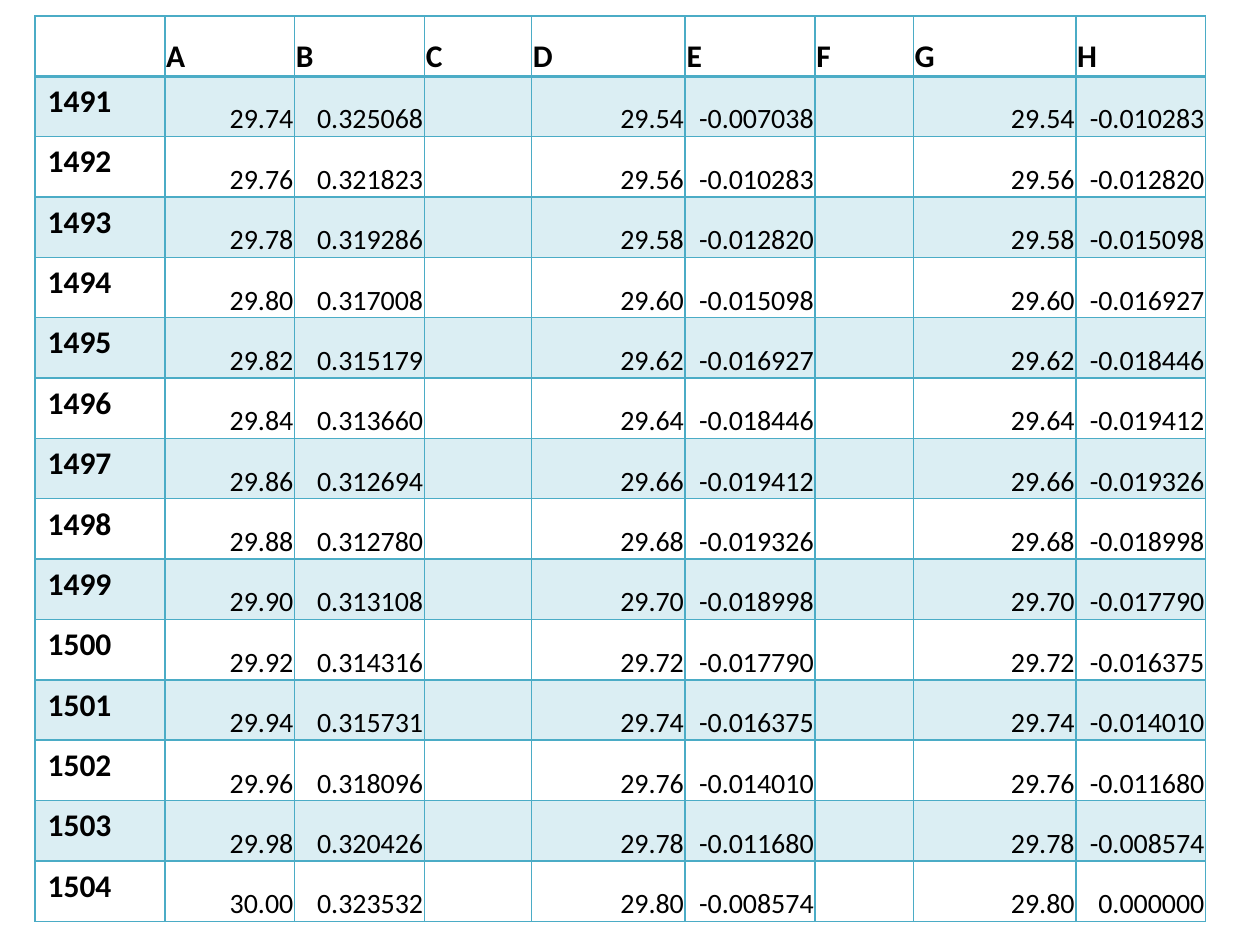
import pptx
import pptx.dml.color
import pptx.enum.text
import pptx.oxml.ns
import pptx.util
from lxml import etree

Pt = pptx.util.Pt
qn = pptx.oxml.ns.qn
ANCHOR = pptx.enum.text.MSO_ANCHOR
ALIGN = pptx.enum.text.PP_ALIGN

COLUMN_WIDTHS = [74.2, 74.2, 74.2, 61.2, 87.8, 74.2, 56.2, 92.9, 74.2]
ROW_HEIGHT = 34.52
FIRST_LABEL = 1491
BASELINE = 0.332106
READINGS = [
    0.325068, 0.321823, 0.319286, 0.317008, 0.315179, 0.313660, 0.312694,
    0.312780, 0.313108, 0.314316, 0.315731, 0.318096, 0.320426, 0.323532,
]


def color(value):
    return pptx.dml.color.RGBColor.from_string(value)


def table_rows():
    offsets = [reading - BASELINE for reading in READINGS]
    shifted = offsets[1:] + [0]
    rows = [["", *"ABCDEFGH"]]
    for index, (reading, offset, following) in enumerate(zip(READINGS, offsets, shifted)):
        step = 0.02 * index
        start, earlier = f"{29.74 + step:.2f}", f"{29.54 + step:.2f}"
        rows.append([
            str(FIRST_LABEL + index),
            start, f"{reading:.6f}", "",
            earlier, f"{offset:.6f}", "",
            earlier, f"{following:.6f}",
        ])
    return rows


class Sheet:
    font = "Calibri"
    ink = "000000"
    accent = "4BACC6"
    band_opacity = 20

    def __init__(self, page):
        self.page = page

    def table(self, rows, left, top):
        width, height = sum(COLUMN_WIDTHS), ROW_HEIGHT * len(rows)
        frame = self.page.shapes.add_table(
            len(rows), len(COLUMN_WIDTHS), Pt(left), Pt(top), Pt(width), Pt(height))
        table = frame.table
        table.first_row = table.horz_banding = False
        for column, column_width in zip(table.columns, COLUMN_WIDTHS):
            column.width = Pt(column_width)
        for row_index, values in enumerate(rows):
            table.rows[row_index].height = Pt(ROW_HEIGHT)
            for column_index, value in enumerate(values):
                cell = table.cell(row_index, column_index)
                self.borders(cell, row_index)
                self.fill(cell, row_index % 2 == 1)
                if value:
                    self.text(cell, value, row_index == 0, column_index == 0)

    def borders(self, cell, row_index):
        properties = cell._tc.get_or_add_tcPr()
        widths = {
            "L": 1, "R": 1,
            "T": 2 if row_index == 1 else 1,
            "B": 2 if row_index == 0 else 1,
        }
        for side, width in widths.items():
            line = etree.SubElement(properties, qn("a:ln" + side), w=str(Pt(width)))
            solid = etree.SubElement(line, qn("a:solidFill"))
            etree.SubElement(solid, qn("a:srgbClr"), val=self.accent)

    def fill(self, cell, banded):
        if not banded:
            cell.fill.background()
            return
        cell.fill.solid()
        cell.fill.fore_color.rgb = color(self.accent)
        shade = cell._tc.tcPr.find(qn("a:solidFill")).find(qn("a:srgbClr"))
        etree.SubElement(shade, qn("a:alpha"), val=str(self.band_opacity * 1000))

    def text(self, cell, value, is_header, is_label):
        cell.text = value
        paragraph = cell.text_frame.paragraphs[0]
        paragraph.font.name = self.font
        paragraph.font.color.rgb = color(self.ink)
        paragraph.font.bold = is_header or is_label
        paragraph.font.size = Pt(18 if is_header or is_label else 16)
        if not is_label:
            cell.vertical_anchor = ANCHOR.BOTTOM
            cell.margin_left = cell.margin_right = cell.margin_top = Pt(0.75)
            cell.margin_bottom = Pt(0)
            paragraph.alignment = ALIGN.LEFT if is_header else ALIGN.RIGHT


def main():
    deck = pptx.Presentation()
    deck.slide_width, deck.slide_height = Pt(720), Pt(540)
    sheet = Sheet(deck.slides.add_slide(deck.slide_layouts[6]))
    sheet.table(table_rows(), 20, 9)
    deck.save("out.pptx")


if __name__ == "__main__":
    main()
